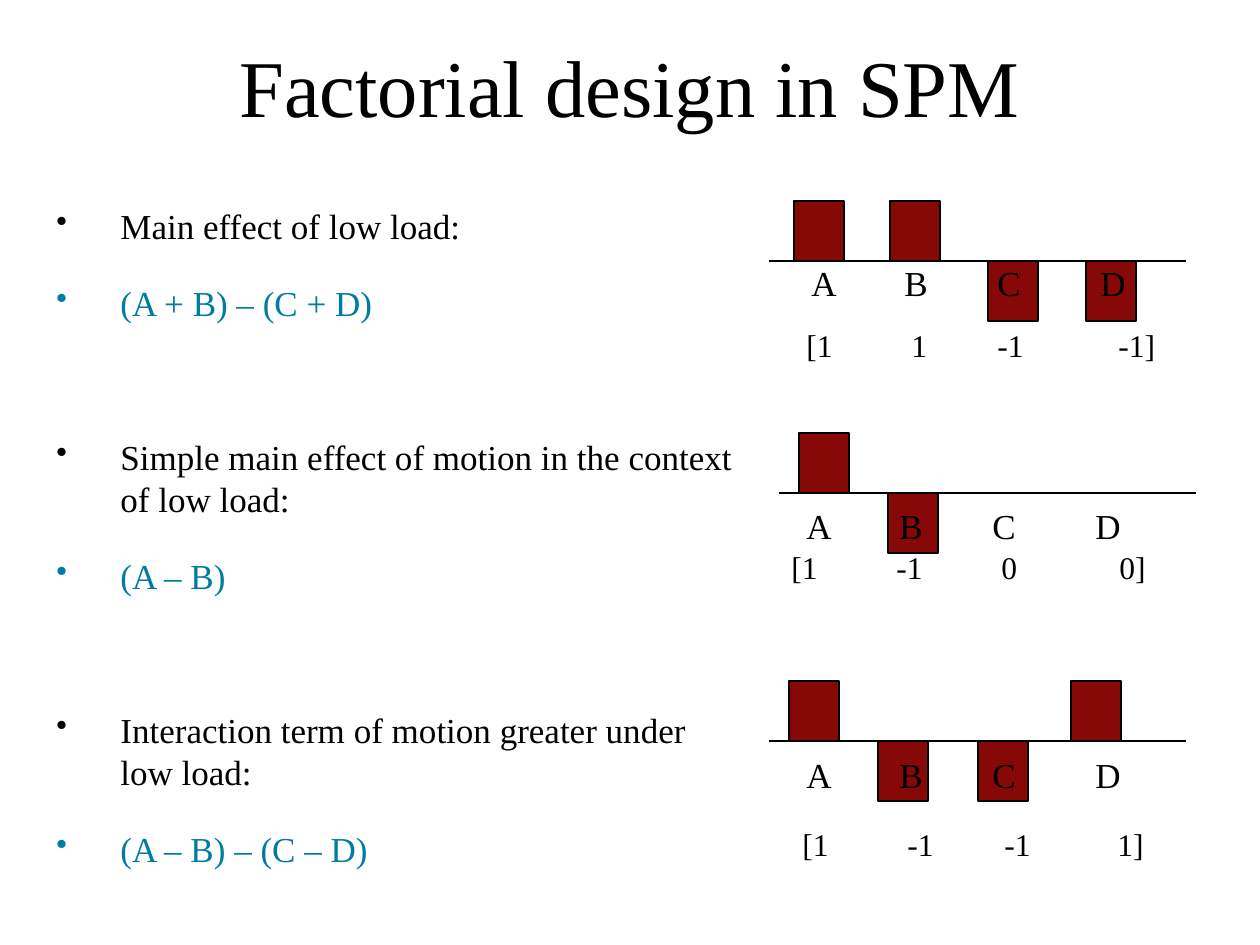
from lxml import etree
from pptx import Presentation
from pptx.dml.color import RGBColor
from pptx.enum.shapes import MSO_CONNECTOR, MSO_SHAPE
from pptx.enum.text import MSO_ANCHOR, MSO_AUTO_SIZE, PP_ALIGN
from pptx.oxml.ns import qn
from pptx.util import Emu, Pt

BLACK = RGBColor(0x00, 0x00, 0x00)
TEAL = RGBColor(0x00, 0x7B, 0xA2)
RED = RGBColor(0x86, 0x09, 0x08)
FONT = "Times New Roman"
RECT, LINE = MSO_SHAPE.RECTANGLE, MSO_CONNECTOR.STRAIGHT
LEFT, CENTER = PP_ALIGN.LEFT, PP_ALIGN.CENTER
TOP, MIDDLE = MSO_ANCHOR.TOP, MSO_ANCHOR.MIDDLE
GROW, FIXED = MSO_AUTO_SIZE.SHAPE_TO_FIT_TEXT, MSO_AUTO_SIZE.NONE

# Content: effects with their contrasts
TITLE = "Factorial design in SPM"
EFFECTS = [
    ("Main effect of low load:", "(A + B) – (C + D)"),
    ("Simple main effect of motion in the context of low load:", "(A – B)"),
    ("Interaction term of motion greater under low load:",
     "(A – B) – (C – D)"),
]

# Content: one plot per effect; sign of a weight gives the bar's direction
NAMES = ["A", "B", "C", "D"]
NAME_TABS = [93, 186, 289]
PLOTS = [
    {"axis": (769, 261), "bars": [(794, 1), (890, 1), (988, -1), (1086, -1)],
     "names": (799, 255), "at": (794, 320),
     "weights": ["[1", "1", "-1", "-1]"], "tabs": [105, 191, 312]},
    {"axis": (779, 493), "bars": [(799, 1), (888, -1)],
     "names": (794, 498), "at": (779, 542),
     "weights": ["[1", "-1", "0", "0]"], "tabs": [105, 210, 328]},
    {"axis": (769, 741), "bars": [(789, 1), (878, -1), (978, -1), (1071, 1)],
     "names": (794, 747), "at": (790, 819),
     "weights": ["[1", "-1", "-1", "1]"], "tabs": [105, 202, 315]},
]
AXIS_W, BAR_W, BAR_H = 417, 50, 60
INDENT = 64


def px(n):
    return Emu(round(n * 914400 / 126))


prs = Presentation()
prs.slide_width, prs.slide_height = px(1260), px(945)
slide = prs.slides.add_slide(prs.slide_layouts[6])
shapes = slide.shapes


def add_text(paras, box, size=20, align=LEFT, anchor=TOP, inset=6,
             fit=FIXED, tabs=(), bullet=False):
    """Add a text box; paras holds (text, colour, points before)."""
    frame = shapes.add_textbox(*map(px, box)).text_frame
    frame.word_wrap, frame.auto_size = True, fit
    frame.vertical_anchor, frame.margin_top = anchor, px(inset)
    for i, (text, color, gap) in enumerate(paras):
        para = frame.add_paragraph() if i else frame.paragraphs[0]
        para.alignment = align
        if gap:
            para.space_before = Pt(gap)
        props = para._p.get_or_add_pPr()
        if bullet:
            props.set("marL", str(px(INDENT)))
            props.set("indent", str(-px(INDENT)))
            etree.SubElement(props, qn("a:buSzPct"), val="90000")
            etree.SubElement(props, qn("a:buChar"), char="•")
        if tabs:
            stops = etree.SubElement(props, qn("a:tabLst"))
            for tab in tabs:
                etree.SubElement(stops, qn("a:tab"), pos=str(px(tab)),
                                 algn="l")
        run = para.add_run()
        run.text = text
        run.font.name, run.font.size = FONT, Pt(size)
        run.font.color.rgb = color


def add_bar(x, axis, sign):
    top = axis - BAR_H if sign > 0 else axis
    bar = shapes.add_shape(RECT, *map(px, (x, top, BAR_W, BAR_H)))
    bar.shadow.inherit = False
    bar.fill.solid()
    bar.fill.fore_color.rgb = RED
    bar.line.color.rgb, bar.line.width = BLACK, Pt(0.75)


def add_axis(x, y):
    axis = shapes.add_connector(LINE, px(x), px(y), px(x + AXIS_W), px(y))
    axis.line.color.rgb, axis.line.width = BLACK, Pt(0.75)
    etree.SubElement(axis._element.spPr, qn("a:effectLst"))


# Title
add_text([(TITLE, BLACK, 0)], (45, -4, 1169, 179), size=46, align=CENTER,
         anchor=MIDDLE)

# Effects and contrasts
items = []
for i, (effect, contrast) in enumerate(EFFECTS):
    items += [(effect, BLACK, 64 if i else 0), (contrast, TEAL, 20)]
add_text(items, (44, 121, 713, 824), inset=83, bullet=True)

# Plots: bars, axis, condition names, weights
for plot in PLOTS:
    for x, sign in plot["bars"]:
        add_bar(x, plot["axis"][1], sign)
    add_axis(*plot["axis"])
    add_text([("\t".join(NAMES), BLACK, 0)], (*plot["names"], 387, 54),
             fit=GROW, tabs=NAME_TABS)
    add_text([("\t".join(plot["weights"]), BLACK, 0)], (*plot["at"], 437, 50),
             size=18, fit=GROW, tabs=plot["tabs"])

prs.save("out.pptx")
